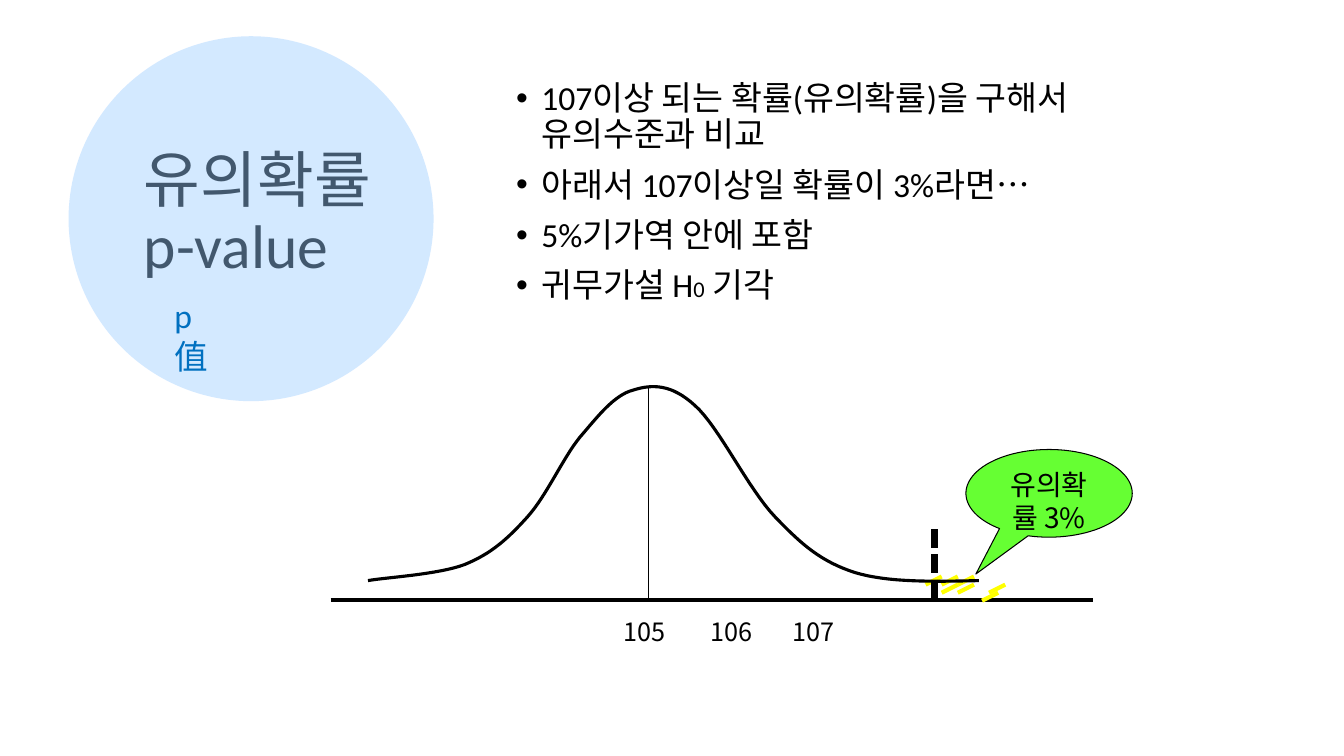
from lxml import etree
from pptx import Presentation
from pptx.dml.color import RGBColor
from pptx.enum.dml import MSO_LINE
from pptx.enum.shapes import MSO_CONNECTOR, MSO_SHAPE
from pptx.enum.text import MSO_ANCHOR, PP_ALIGN
from pptx.oxml.ns import qn
from pptx.util import Inches, Pt

presentation = Presentation()
presentation.slide_width = Inches(13.33)
presentation.slide_height = Inches(7.5)
slide = presentation.slides.add_slide(presentation.slide_layouts[6])
shapes = slide.shapes


def write(shape, paragraphs, size=24, font="Calibri", color="000000", wrap=True,
          anchor=MSO_ANCHOR.TOP, align=PP_ALIGN.LEFT, spacing=1.0, before=0):
    """Fill a shape with paragraphs, each a list of (text, overrides) runs; return the paragraphs."""
    frame = shape.text_frame
    frame.word_wrap = wrap
    frame.vertical_anchor = anchor
    for index, runs in enumerate(paragraphs):
        paragraph = frame.paragraphs[0] if index == 0 else frame.add_paragraph()
        paragraph.alignment = align
        paragraph.line_spacing = spacing
        paragraph.space_before = Pt(before)
        for text, overrides in runs:
            for line_number, line in enumerate(text.split("\n")):
                if line_number:
                    paragraph.add_line_break()
                run = paragraph.add_run()
                run.text = line
                run.font.size = Pt(overrides.get("size", size))
                run.font.name = overrides.get("font", font)
                run.font.color.rgb = RGBColor.from_string(color)
    return frame.paragraphs


def add_line(x1, y1, x2, y2, color="000000", width=0.75, dash=None):
    line = shapes.add_connector(MSO_CONNECTOR.STRAIGHT, Inches(x1), Inches(y1),
                                Inches(x2), Inches(y2))
    line.line.color.rgb = RGBColor.from_string(color)
    line.line.width = Pt(width)
    if dash:
        line.line.dash_style = dash
    etree.SubElement(line._element.spPr, qn("a:effectLst"))


# Title and bullets
title = shapes.add_textbox(Inches(1.33), Inches(0.57), Inches(2.76), Inches(3.14))
write(title, [[("유의확률\np-value", {})]], size=44, anchor=MSO_ANCHOR.MIDDLE, spacing=0.9)

body = shapes.add_textbox(Inches(5.02), Inches(0.76), Inches(6.61), Inches(2.99))
bullets = write(body, [
    [("107이상 되는 확률(유의확률)을 구해서 유의수준과 비교", {})],
    [("아래서 107이상일 확률이 3%라면", {}), ("…", {"font": "Arial"})],
    [("5%기가역 안에 포함", {})],
    [("귀무가설 H", {}), ("0", {"size": 16}), (" 기각", {})],
], spacing=0.9, before=10)
for paragraph in bullets:
    properties = paragraph._p.get_or_add_pPr()
    properties.set("marL", str(Inches(0.25)))
    properties.set("indent", str(-Inches(0.25)))
    etree.SubElement(properties, qn("a:buFont"), typeface="Arial")
    etree.SubElement(properties, qn("a:buChar"), char="•")

# Axis with its labels
AXIS_Y = 5.95
add_line(3.28, AXIS_Y, 10.84, AXIS_Y, width=3)
labels = shapes.add_textbox(Inches(6.09), Inches(6.07), Inches(3.49), Inches(0.4))
label_row = write(labels, [[("105\t106\t107", {})]], size=18, font="Noto Sans CJK KR",
                  wrap=False)[0]
tabs = etree.SubElement(label_row._p.get_or_add_pPr(), qn("a:tabLst"))
for position in (0.86, 1.67):
    etree.SubElement(tabs, qn("a:tab"), pos=str(Inches(position)), algn="l")
add_line(6.43, 3.83, 6.43, AXIS_Y)

# Hatching of the tail and the critical value
for x, y in [(9.34, 5.72), (9.5, 5.72), (9.5, 5.8), (9.66, 5.8),
             (9.9, 5.88), (9.97, 5.8), (9.66, 5.72)]:
    add_line(x, y, x - 0.16, y + 0.08, color="FFFF00", width=3)
add_line(9.27, 5.88, 9.27, AXIS_Y)
add_line(9.27, 5.25, 9.27, AXIS_Y, width=4.5, dash=MSO_LINE.SQUARE_DOT)

callout = shapes.add_shape(MSO_SHAPE.OVAL_CALLOUT, Inches(9.58), Inches(4.46),
                           Inches(1.65), Inches(0.87))
callout.shadow.inherit = False
callout.adjustments[0] = -0.44
callout.adjustments[1] = 0.92
callout.fill.solid()
callout.fill.fore_color.rgb = RGBColor.from_string("66FF33")
callout.line.color.rgb = RGBColor.from_string("000000")
callout.line.width = Pt(0.75)
write(callout, [[("유의확률 3%", {})]], size=20, font="Noto Sans CJK KR",
      align=PP_ALIGN.CENTER)

# Translucent circle over the title
circle = shapes.add_shape(MSO_SHAPE.OVAL, Inches(0.68), Inches(0.36),
                          Inches(3.62), Inches(3.62))
circle.shadow.inherit = False
circle.fill.solid()
circle.fill.fore_color.rgb = RGBColor.from_string("99CCFF")
circle.line.fill.background()
circle_color = circle._element.spPr.find(qn("a:solidFill"))[0]
etree.SubElement(circle_color, qn("a:alpha"), val="43000")

# Bell curve: cubic segments sampled into short steps, from the right tail to the left
STEPS = 16
start = (9.71, 5.76)
segments = [
    [(9.26, 5.77), (8.81, 5.78), (8.48, 5.68)],
    [(8.14, 5.57), (7.95, 5.4), (7.69, 5.13)],
    [(7.42, 4.85), (7.13, 4.23), (6.89, 4.02)],
    [(6.66, 3.81), (6.47, 3.81), (6.28, 3.87)],
    [(6.09, 3.92), (5.93, 4.13), (5.75, 4.34)],
    [(5.58, 4.55), (5.42, 4.92), (5.23, 5.13)],
    [(5.04, 5.34), (4.88, 5.49), (4.61, 5.6)],
    [(4.35, 5.7), (3.81, 5.73), (3.65, 5.76)],
]
points = [start]
for control1, control2, end in segments:
    origin = points[-1]
    for step in range(1, STEPS + 1):
        t = step / STEPS
        weights = ((1 - t) ** 3, 3 * t * (1 - t) ** 2, 3 * t ** 2 * (1 - t), t ** 3)
        corners = (origin, control1, control2, end)
        points.append(tuple(sum(weight * corner[axis] for weight, corner in zip(weights, corners))
                            for axis in (0, 1)))
builder = shapes.build_freeform(Inches(start[0]), Inches(start[1]))
builder.add_line_segments([(Inches(x), Inches(y)) for x, y in points[1:]], close=False)
curve = builder.convert_to_shape()
curve.shadow.inherit = False
curve.fill.background()
curve.line.color.rgb = RGBColor.from_string("000000")
curve.line.width = Pt(2.25)

subtitle = shapes.add_textbox(Inches(1.63), Inches(2.88), Inches(0.65), Inches(0.5))
write(subtitle, [[("p值", {})]], color="0070C0")

presentation.save("out.pptx")
